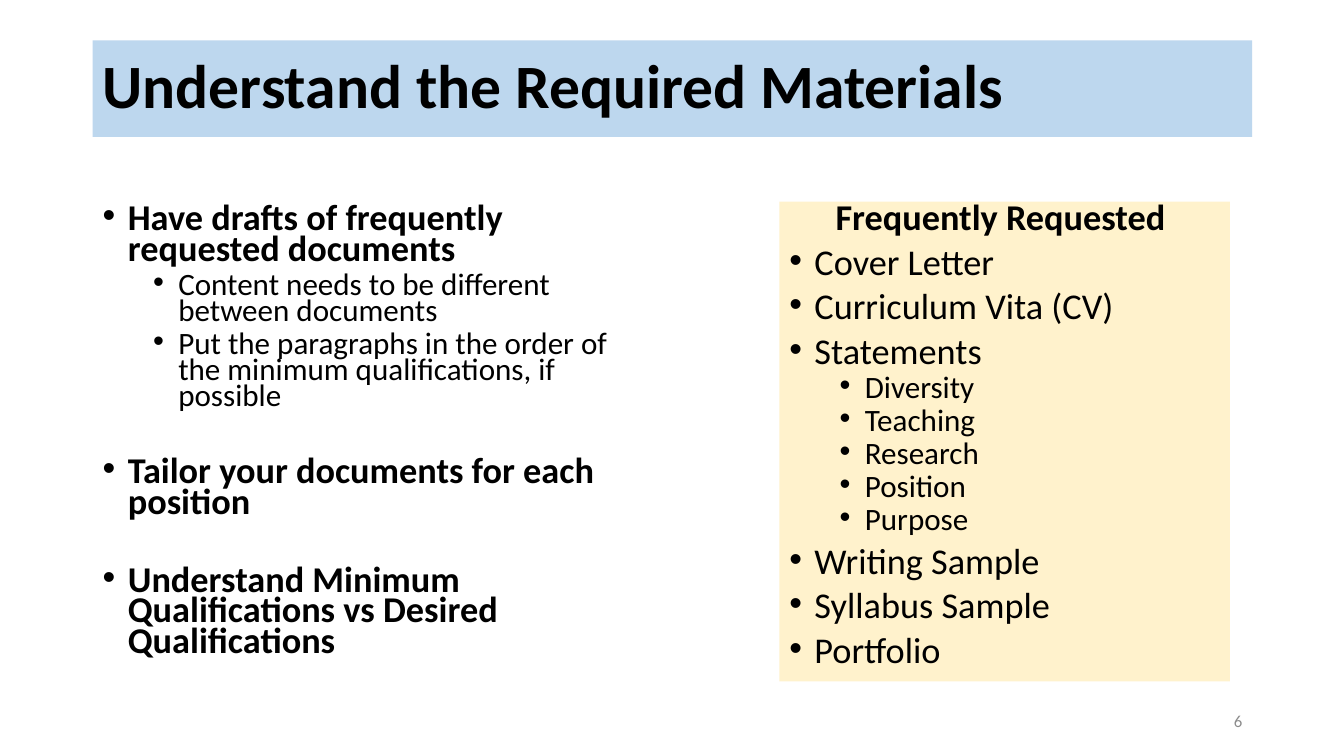
from lxml import etree
from pptx import Presentation
from pptx import util as u
from pptx.dml.color import RGBColor
from pptx.enum import shapes, text
from pptx.oxml.ns import qn

FONT = "Calibri"
BLACK = "000000"
HEADING, ITEM, DETAIL = "heading", "item", "detail"

# style: size, bold, left indent in px, space before in points
STYLES = {
    HEADING: (25.9, True, 25, 10),
    ITEM: (25.9, False, 25, 10),
    DETAIL: (22.2, False, 75, 5),
}
HANGING = 25
SECTION_GAP = 34

ADVICE = [
    (HEADING, "Have drafts of frequently requested documents"),
    (DETAIL, "Content needs to be different between documents"),
    (DETAIL, "Put the paragraphs in the order of the minimum qualifications, if possible"),
    (HEADING, "Tailor your documents for each position"),
    (HEADING, "Understand Minimum Qualifications vs Desired Qualifications"),
]
REQUESTED = [
    (HEADING, "Frequently Requested "),
    (ITEM, "Cover Letter"),
    (ITEM, "Curriculum Vita (CV)"),
    (ITEM, "Statements"),
    (DETAIL, "Diversity"),
    (DETAIL, "Teaching"),
    (DETAIL, "Research"),
    (DETAIL, "Position"),
    (DETAIL, "Purpose"),
    (ITEM, "Writing Sample"),
    (ITEM, "Syllabus Sample"),
    (ITEM, "Portfolio"),
]


def px(length):
    """Convert px, at 100 to the inch, into EMU."""
    return u.Emu(length * 9144)


def color(value):
    return RGBColor.from_string(value)


def add_panel(slide, box, fill=None, anchor=text.MSO_ANCHOR.TOP):
    """Add a text area, filled if a colour is given, and return its text frame."""
    place = [px(length) for length in box]
    if fill:
        shape = slide.shapes.add_shape(shapes.MSO_SHAPE.RECTANGLE, *place)
        shape.shadow.inherit = False
        shape.fill.solid()
        shape.fill.fore_color.rgb = color(fill)
        shape.line.fill.background()
    else:
        shape = slide.shapes.add_textbox(*place)
    frame = shape.text_frame
    frame.word_wrap = True
    frame.vertical_anchor = anchor
    return frame


def write(paragraph, words, size, bold=False, ink=BLACK, align=text.PP_ALIGN.LEFT):
    paragraph.text = words
    paragraph.alignment = align
    for run in paragraph.runs:
        run.font.name = FONT
        run.font.size = u.Pt(size)
        run.font.bold = bold
        run.font.color.rgb = color(ink)


def add_bullet(paragraph, indent):
    properties = paragraph._p.get_or_add_pPr()
    properties.set("marL", str(px(indent)))
    properties.set("indent", str(px(-HANGING)))
    etree.SubElement(properties, qn("a:buFont"), typeface="Arial")
    etree.SubElement(properties, qn("a:buChar"), char="•")


def write_list(frame, entries, centered_heading=False):
    for index, (style, words) in enumerate(entries):
        size, bold, indent, space = STYLES[style]
        paragraph = frame.add_paragraph() if index else frame.paragraphs[0]
        centered = centered_heading and style == HEADING
        align = text.PP_ALIGN.CENTER if centered else text.PP_ALIGN.LEFT
        write(paragraph, words, size, bold, align=align)
        new_section = index and style == HEADING
        paragraph.space_before = u.Pt(SECTION_GAP if new_section else space)
        paragraph.line_spacing = 0.7
        if not centered:
            add_bullet(paragraph, indent)


def main():
    presentation = Presentation()
    presentation.slide_width = px(1333)
    presentation.slide_height = px(750)
    slide = presentation.slides.add_slide(presentation.slide_layouts[6])
    middle = text.MSO_ANCHOR.MIDDLE

    title = add_panel(slide, (92, 40, 1150, 96), "BDD7EE", middle).paragraphs[0]
    write(title, "Understand the Required Materials", 44, bold=True)
    title.line_spacing = 0.9

    write_list(add_panel(slide, (92, 200, 567, 476)), ADVICE)
    requested = add_panel(slide, (773, 200, 447, 476), "FFF2CC")
    write_list(requested, REQUESTED, centered_heading=True)

    number = add_panel(slide, (942, 695, 300, 40), anchor=middle).paragraphs[0]
    write(number, "6", 12, ink="8C8C8C", align=text.PP_ALIGN.RIGHT)

    presentation.save("out.pptx")


if __name__ == "__main__":
    main()
